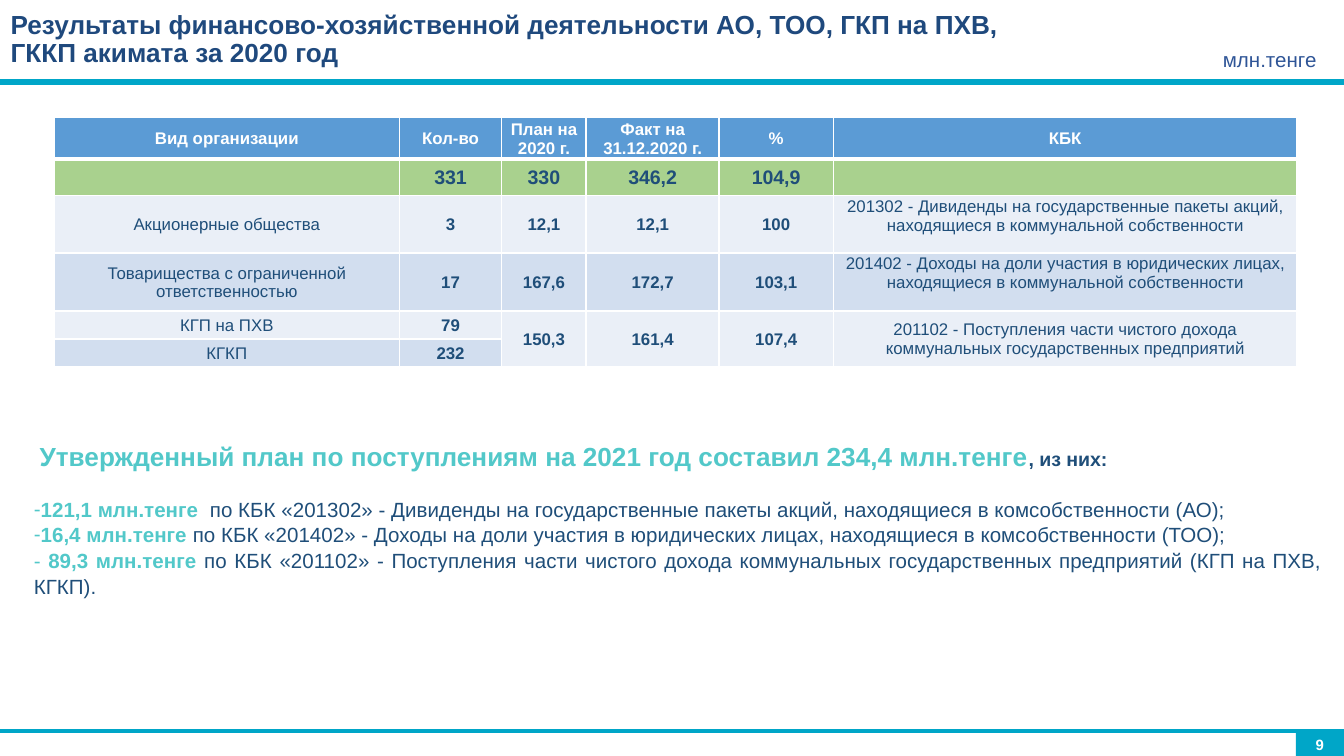
"""Build the slide on financial results of municipal organisations."""
from dataclasses import dataclass

from lxml.etree import SubElement
from pptx import Presentation
from pptx.dml.color import RGBColor
from pptx.enum.shapes import MSO_CONNECTOR as Connector, MSO_SHAPE as Shape
from pptx.enum.text import MSO_ANCHOR as Anchor, PP_ALIGN as Align
from pptx.oxml.ns import qn
from pptx.util import Cm, Pt


@dataclass(frozen=True)
class Theme:
    """Colours, font and type sizes."""
    font: str = "Arial"
    white: str = "FFFFFF"
    rule: str = "00A6C8"
    title: str = "1F497D"
    unit: str = "2F5597"
    text: str = "1F4E79"
    accent: str = "52C8C9"
    header: str = "5B9BD5"
    total: str = "A9D18E"
    light: str = "EAEFF7"
    dark: str = "D2DEEF"
    heading_size: float = 14
    body_size: float = 11
    total_size: float = 10.5
    cell_size: float = 9
    number_size: float = 8


THEME = Theme()
WIDTH, HEIGHT = 25.4, 14.29

TITLE = "Результаты финансово-хозяйственной деятельности АО, ТОО, ГКП на ПХВ, ГККП акимата за 2020 год"
UNIT = "млн.тенге"
PAGE_NUMBER = "9"

COLUMNS = [6.53, 1.93, 1.6, 2.51, 2.16, 8.76]
ROW_HEIGHTS = [0.71, 0.69, 1.09, 1.09, 0.53, 0.53]
ROW_FILLS = [THEME.header, THEME.total] + [THEME.light, THEME.dark] * 2
ROWS = [
    ["Вид организации", "Кол-во", "План на 2020 г.", "Факт на 31.12.2020 г.", "%", "КБК"],
    ["", "331", "330", "346,2", "104,9", ""],
    ["Акционерные общества", "3", "12,1", "12,1", "100",
     "201302 - Дивиденды на государственные пакеты акций, находящиеся в коммунальной собственности"],
    ["Товарищества с ограниченной ответственностью", "17", "167,6", "172,7", "103,1",
     "201402 - Доходы на доли участия в юридических лицах, находящиеся в коммунальной собственности"],
    ["КГП на ПХВ", "79", "150,3", "161,4", "107,4",
     "201102 - Поступления части чистого дохода коммунальных государственных предприятий"],
    ["КГКП", "232", "", "", "", ""],
]
MERGED_COLUMNS = range(2, 6)

PLAN = "Утвержденный план по поступлениям на 2021 год составил 234,4 млн.тенге"
PLAN_TAIL = ", из них:"
ITEMS = [
    ("-", "", "121,1 млн.тенге  ",
     "по КБК «201302» - Дивиденды на государственные пакеты акций, находящиеся в комсобственности (АО);"),
    ("-", "", "16,4 млн.тенге ",
     "по КБК «201402» - Доходы на доли участия в юридических лицах, находящиеся в комсобственности (ТОО);"),
    ("", "- ", "89,3 млн.тенге ",
     "по КБК «201102» - Поступления части чистого дохода коммунальных государственных предприятий (КГП на ПХВ, КГКП)."),
]


def add_span(para, text, size, color, bold=False):
    span = para.add_run()
    span.text = text
    span.font.name = THEME.font
    span.font.size = Pt(size)
    span.font.bold = bold
    span.font.color.rgb = RGBColor.from_string(color)


def set_margins(target, left, top, right, bottom):
    target.margin_left, target.margin_top = Cm(left), Cm(top)
    target.margin_right, target.margin_bottom = Cm(right), Cm(bottom)


def add_box(page, left, top, width, height, margins):
    frame = page.shapes.add_textbox(Cm(left), Cm(top), Cm(width), Cm(height)).text_frame
    frame.word_wrap = True
    set_margins(frame, *margins)
    return frame


def add_rule(page, top, weight):
    rule = page.shapes.add_connector(Connector.STRAIGHT, 0, Cm(top), Cm(WIDTH), Cm(top))
    rule.line.color.rgb = RGBColor.from_string(THEME.rule)
    rule.line.width = Pt(weight)
    SubElement(rule._element.spPr, qn("a:effectLst"))


def add_frame(page):
    add_rule(page, 1.55, 3)
    add_rule(page, 13.82, 2)
    badge = page.shapes.add_shape(Shape.RECTANGLE, Cm(24.49), Cm(13.84), Cm(0.91), Cm(0.45))
    badge.shadow.inherit = False
    badge.fill.solid()
    badge.fill.fore_color.rgb = RGBColor.from_string(THEME.rule)
    badge.line.fill.background()
    frame = badge.text_frame
    frame.vertical_anchor = Anchor.MIDDLE
    set_margins(frame, 0.13, 0.08, 0.13, 0.08)
    para = frame.paragraphs[0]
    para.alignment = Align.CENTER
    add_span(para, PAGE_NUMBER, THEME.number_size, THEME.white, True)


def add_heading(page):
    para = add_box(page, 0, 0.13, 20.07, 1.63, (0.2, 0.1, 0.2, 0.1)).paragraphs[0]
    para.line_spacing = 0.9
    add_span(para, TITLE, THEME.heading_size, THEME.title, True)
    para = add_box(page, 22.86, 0.76, 2.54, 0.74, (0.25, 0.13, 0.25, 0.13)).paragraphs[0]
    add_span(para, UNIT, THEME.body_size, THEME.unit)


def set_borders(cell, bottom):
    properties = cell._tc.get_or_add_tcPr()
    for side, weight in (("L", 1), ("R", 1), ("T", 1), ("B", bottom)):
        line = SubElement(properties, qn(f"a:ln{side}"), w=str(Pt(weight)))
        SubElement(SubElement(line, qn("a:solidFill")), qn("a:srgbClr"), val=THEME.white)


def add_results(page):
    table = page.shapes.add_table(len(ROWS), len(COLUMNS), Cm(1.02), Cm(2.21),
                                  Cm(sum(COLUMNS)), Cm(sum(ROW_HEIGHTS))).table
    for column, width in zip(table.columns, COLUMNS):
        column.width = Cm(width)
    for index, (values, height, fill) in enumerate(zip(ROWS, ROW_HEIGHTS, ROW_FILLS)):
        table.rows[index].height = Cm(height)
        header = index == 0
        size = THEME.total_size if index == 1 else THEME.cell_size
        color = THEME.white if header else THEME.text
        for column, value in enumerate(values):
            cell = table.cell(index, column)
            set_borders(cell, 3 if header else 1)
            cell.fill.solid()
            cell.fill.fore_color.rgb = RGBColor.from_string(fill)
            set_margins(cell, 0.03, 0.03, 0.03, 0)
            top_aligned = column == 5 and index in (2, 3)
            cell.vertical_anchor = Anchor.TOP if top_aligned else Anchor.MIDDLE
            para = cell.text_frame.paragraphs[0]
            para.alignment = Align.CENTER
            para.font.size = Pt(size)
            if value:
                add_span(para, value, size, color, header or column in range(1, 5))
    for column in MERGED_COLUMNS:
        table.cell(4, column).merge(table.cell(5, column))


def add_plan(page):
    frame = add_box(page, 0.51, 7.8, 24.61, 5, (0.13, 0.52, 0.13, 0.08))
    para = frame.paragraphs[0]
    para.alignment = Align.JUSTIFY
    para._p.get_or_add_pPr().set("marL", str(Cm(0.11)))
    para.space_after = Pt(13)
    add_span(para, PLAN, THEME.heading_size, THEME.accent, True)
    add_span(para, PLAN_TAIL, THEME.total_size, THEME.text, True)
    for bullet, dash, amount, purpose in ITEMS:
        para = frame.add_paragraph()
        para.alignment = Align.JUSTIFY
        para.line_spacing = 1.04
        if bullet:
            properties = para._p.get_or_add_pPr()
            properties.set("marL", "0")
            properties.set("indent", "0")
            SubElement(properties, qn("a:buFont"), typeface=THEME.font)
            SubElement(properties, qn("a:buChar"), char=bullet)
        if dash:
            add_span(para, dash, THEME.body_size, THEME.accent)
        add_span(para, amount, THEME.body_size, THEME.accent, True)
        add_span(para, purpose, THEME.body_size, THEME.text)


def main():
    deck = Presentation()
    deck.slide_width, deck.slide_height = Cm(WIDTH), Cm(HEIGHT)
    page = deck.slides.add_slide(deck.slide_layouts[6])
    add_frame(page)
    add_heading(page)
    add_results(page)
    add_plan(page)
    deck.save("out.pptx")


if __name__ == "__main__":
    main()
